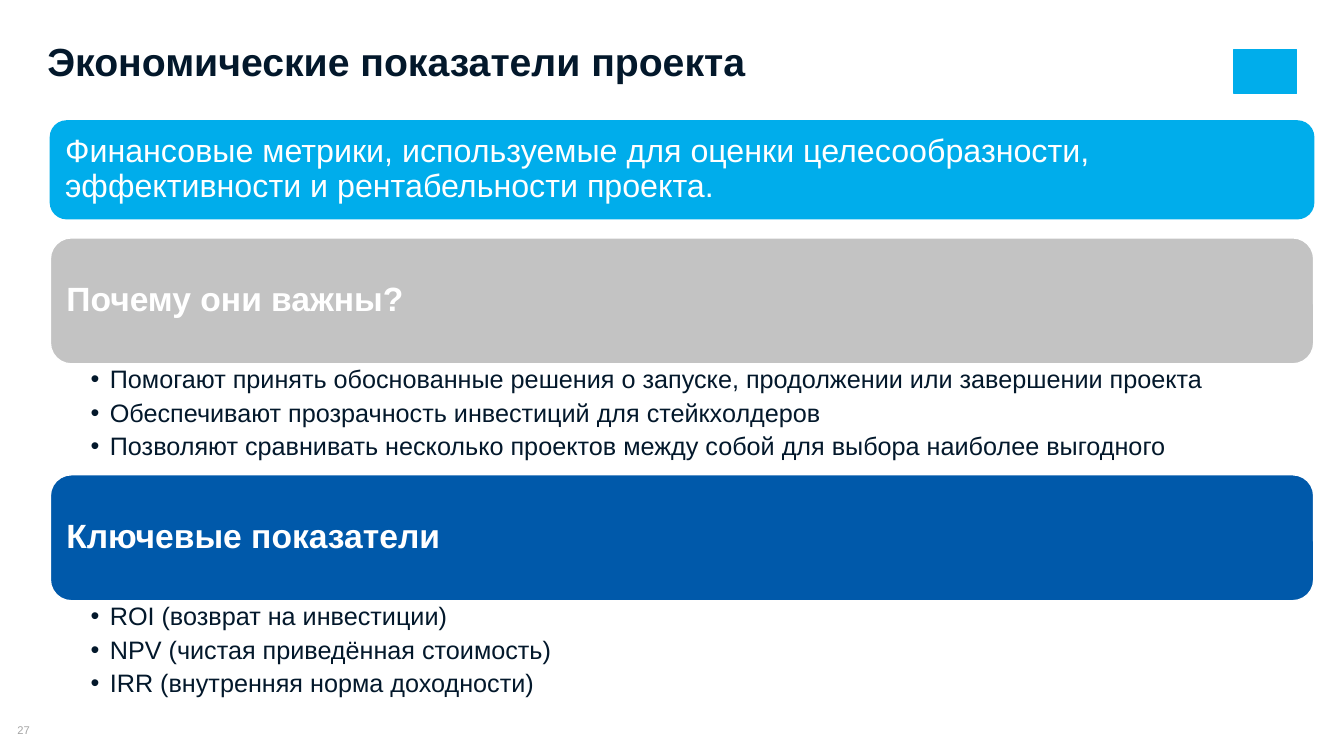
from dataclasses import dataclass

from lxml.etree import SubElement
from pptx import Presentation
from pptx.dml.color import RGBColor
from pptx.enum.shapes import MSO_SHAPE
from pptx.enum.text import MSO_ANCHOR, PP_ALIGN
from pptx.oxml.ns import qn
from pptx.shapes.autoshape import Shape
from pptx.slide import Slide
from pptx.util import Inches, Pt

WHITE = RGBColor(0xFF, 0xFF, 0xFF)
NAVY = RGBColor(0x03, 0x18, 0x2B)
SKY = RGBColor(0x00, 0xAD, 0xEB)
BLUE = RGBColor(0x00, 0x59, 0xAA)
SILVER = RGBColor(0xC3, 0xC3, 0xC3)
GRAY = RGBColor(0xA6, 0xA6, 0xA6)

FONT = "Arial"
LEFT, WIDTH = 0.5, 12.53
HEADER_HEIGHT, LIST_HEIGHT = 1.25, 1.1
SECTIONS_TOP = 2.36
BULLET_INDENT = 0.19


@dataclass(frozen=True)
class Box:
    left: float
    top: float
    width: float
    height: float

    def lengths(self) -> tuple:
        return tuple(Inches(v) for v in (self.left, self.top, self.width, self.height))


@dataclass(frozen=True)
class Section:
    heading: str
    color: RGBColor
    points: tuple[str, ...]


SECTIONS = (
    Section("Почему они важны?", SILVER, (
        "Помогают принять обоснованные решения о запуске, продолжении или завершении проекта",
        "Обеспечивают прозрачность инвестиций для стейкхолдеров",
        "Позволяют сравнивать несколько проектов между собой для выбора наиболее выгодного",
    )),
    Section("Ключевые показатели", BLUE, (
        "ROI (возврат на инвестиции)",
        "NPV (чистая приведённая стоимость)",
        "IRR (внутренняя норма доходности)",
    )),
)


def write_text(
    shape: Shape,
    *lines: str,
    size: float,
    color: RGBColor,
    bold: bool = False,
    align: PP_ALIGN = PP_ALIGN.LEFT,
    anchor: MSO_ANCHOR = MSO_ANCHOR.MIDDLE,
    margins: tuple[float, float, float, float] = (0, 0, 0, 0),
    line_spacing: float = 0.9,
    space_after: float = 0,
    bullets: bool = False,
) -> None:
    """Fill a shape with one paragraph per line; margins run left, top, right, bottom."""
    frame = shape.text_frame
    frame.word_wrap = True
    frame.vertical_anchor = anchor
    (frame.margin_left, frame.margin_top,
     frame.margin_right, frame.margin_bottom) = map(Inches, margins)
    for index, line in enumerate(lines):
        paragraph = frame.add_paragraph() if index else frame.paragraphs[0]
        paragraph.alignment = align
        paragraph.line_spacing = line_spacing
        paragraph.space_after = Pt(space_after)
        run = paragraph.add_run()
        run.text = line
        run.font.name = FONT
        run.font.size = Pt(size)
        run.font.bold = bold
        run.font.color.rgb = color
        if bullets:
            paragraph.level = 1
            add_bullet(paragraph._p.get_or_add_pPr())


def add_bullet(properties) -> None:
    properties.set("marL", str(Inches(BULLET_INDENT)))
    properties.set("indent", str(-Inches(BULLET_INDENT)))
    SubElement(properties, qn("a:buFont"), typeface=FONT)
    SubElement(properties, qn("a:buChar"), char="•")


def add_text_box(slide: Slide, box: Box, *lines: str, **text_format) -> None:
    write_text(slide.shapes.add_textbox(*box.lengths()), *lines, **text_format)


def add_panel(slide: Slide, kind: MSO_SHAPE, box: Box, fill: RGBColor, line: RGBColor) -> Shape:
    panel = slide.shapes.add_shape(kind, *box.lengths())
    panel.shadow.inherit = False
    panel.fill.solid()
    panel.fill.fore_color.rgb = fill
    panel.line.color.rgb = line
    panel.line.width = Pt(1)
    return panel


def add_banner(slide: Slide, box: Box, text: str, fill: RGBColor, line: RGBColor,
               **text_format) -> None:
    banner = add_panel(slide, MSO_SHAPE.ROUNDED_RECTANGLE, box, fill, line)
    write_text(banner, text, color=WHITE, margins=(0.1, 0.1, 0.1, 0.1), **text_format)


def add_section(slide: Slide, section: Section, top: float) -> None:
    add_banner(slide, Box(LEFT, top, WIDTH, HEADER_HEIGHT), section.heading,
               section.color, WHITE, size=24, bold=True)
    add_text_box(slide, Box(LEFT, top + HEADER_HEIGHT, WIDTH, LIST_HEIGHT), *section.points,
                 size=18, color=NAVY, anchor=MSO_ANCHOR.TOP,
                 margins=(0.4, 0.03, 0.14, 0.03), space_after=4.5, bullets=True)


def main() -> None:
    presentation = Presentation()
    presentation.slide_width = Inches(13.33)
    presentation.slide_height = Inches(7.5)
    slide = presentation.slides.add_slide(presentation.slide_layouts[6])

    add_panel(slide, MSO_SHAPE.RECTANGLE, Box(12.24, 0.49, 0.62, 0.44), SKY, SKY)
    add_text_box(slide, Box(0, 7.18, 0.47, 0.13), "27", size=8, color=GRAY,
                 align=PP_ALIGN.CENTER, line_spacing=1)
    add_text_box(slide, Box(0.47, 0.46, 10.51, 0.38), "Экономические показатели проекта",
                 size=28, color=NAVY, bold=True, anchor=MSO_ANCHOR.TOP, line_spacing=0.8)
    for index, section in enumerate(SECTIONS):
        add_section(slide, section, SECTIONS_TOP + index * (HEADER_HEIGHT + LIST_HEIGHT))
    add_banner(slide, Box(LEFT, 1.2, WIDTH, 0.97),
               "Финансовые метрики, используемые для оценки целесообразности, "
               "эффективности и рентабельности проекта.", SKY, SKY, size=23)

    presentation.save("out.pptx")


if __name__ == "__main__":
    main()
